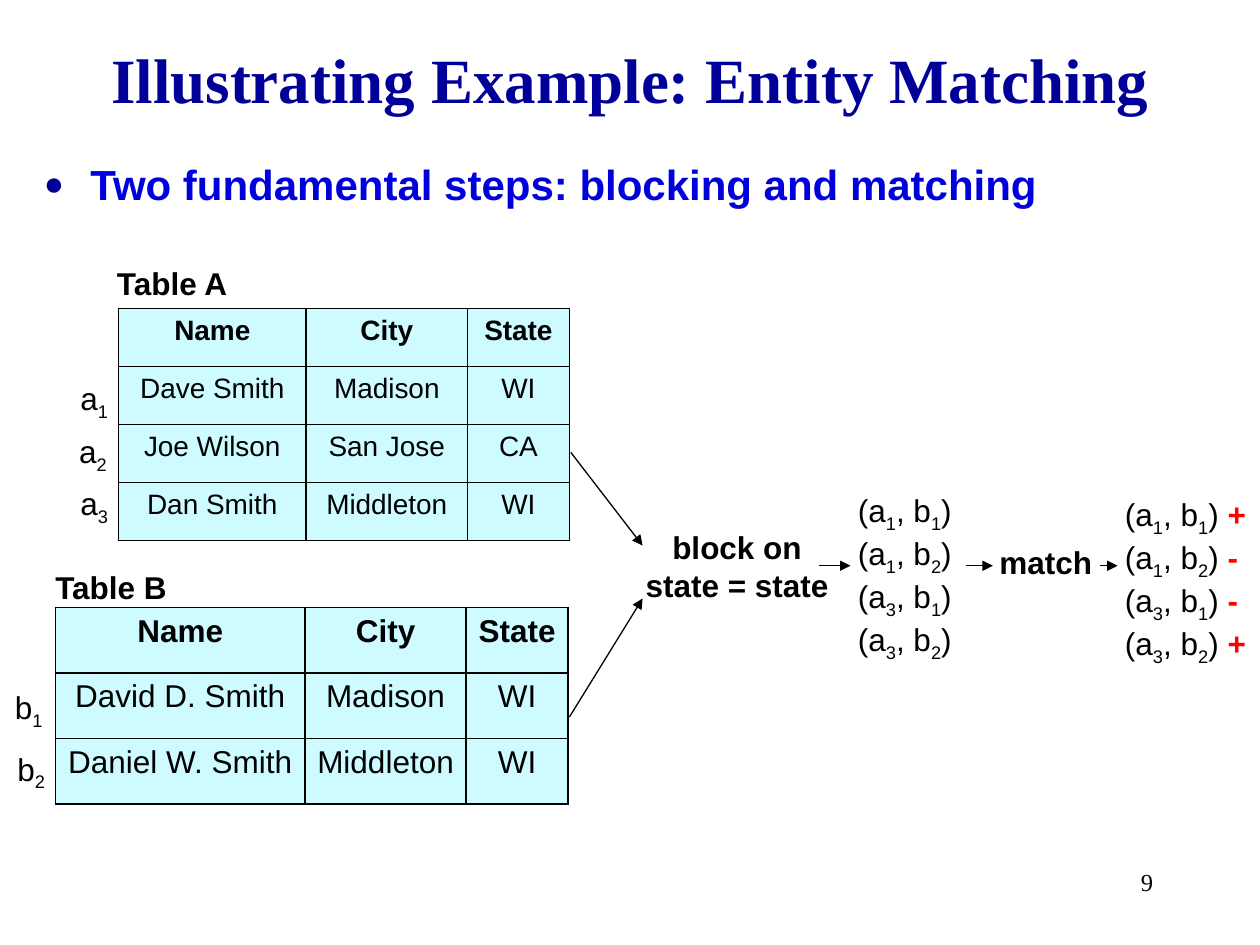
"""Build the entity matching slide: two tables, then blocking and matching."""
import lxml.etree
import pptx
import pptx.dml.color
import pptx.enum.shapes
import pptx.enum.text
import pptx.oxml
import pptx.oxml.ns
import pptx.util

Inches = pptx.util.Inches
Pt = pptx.util.Pt
RGBColor = pptx.dml.color.RGBColor
ALIGN = pptx.enum.text.PP_ALIGN
qn = pptx.oxml.ns.qn

BLACK = RGBColor(0x00, 0x00, 0x00)
NAVY = RGBColor(0x00, 0x00, 0x99)
BLUE = RGBColor(0x00, 0x00, 0xDC)
RED = RGBColor(0xFF, 0x00, 0x00)
PALE_CYAN = RGBColor(0xCD, 0xFB, 0xFF)


def style(paragraph, size, bold=False, color=BLACK, face="Arial", align=ALIGN.LEFT):
    """Set the font and alignment of a paragraph."""
    paragraph.alignment = align
    paragraph.font.name = face
    paragraph.font.size = Pt(size)
    paragraph.font.bold = bold
    paragraph.font.color.rgb = color


def write(left, top, width, height, lines, size=18, **look):
    """Add a text box in which an underscore lowers the next character."""
    box = slide.shapes.add_textbox(Inches(left), Inches(top), Inches(width), Inches(height))
    frame = box.text_frame
    frame.word_wrap = True
    for index, line in enumerate(lines):
        paragraph = frame.paragraphs[0] if index == 0 else frame.add_paragraph()
        style(paragraph, size, **look)
        first, *lowered = line.split("_")
        paragraph.add_run().text = first
        for piece in lowered:
            subscript = paragraph.add_run()
            subscript.text = piece[0]
            subscript.font._element.set("baseline", "-25000")
            if piece[1:]:
                paragraph.add_run().text = piece[1:]
    return frame


deck = pptx.Presentation()
deck.slide_width, deck.slide_height = Inches(10), Inches(7.5)
slide = deck.slides.add_slide(deck.slide_layouts[6])

title = write(0.75, 0.25, 8.5, 0.75, ["Illustrating Example: Entity Matching"],
              size=36, bold=True, color=NAVY, face="Times New Roman", align=ALIGN.CENTER)
title.vertical_anchor = pptx.enum.text.MSO_ANCHOR.MIDDLE
write(7.17, 6.83, 2.08, 0.5, ["9"], size=14, face="Times New Roman", align=ALIGN.RIGHT)

steps = write(0.25, 1.21, 9.5, 0.77, ["Two fundamental steps: blocking and matching"],
              size=24, bold=True, color=BLUE).paragraphs[0]
steps.space_before = Pt(4.8)
steps_format = steps._p.get_or_add_pPr()
steps_format.set("marL", str(Inches(0.37)))
steps_format.set("indent", str(Inches(-0.37)))
bullet = pptx.oxml.parse_xml(
    f'<a:pPr {pptx.oxml.ns.nsdecls("a")}><a:buClr><a:srgbClr val="{NAVY}"/></a:buClr>'
    '<a:buSzPct val="80000"/><a:buFont typeface="Arial"/><a:buChar char="●"/></a:pPr>')
for part in list(bullet):
    steps_format.find(qn("a:defRPr")).addprevious(part)

HEADER = ("Name", "City", "State")
people_a = [HEADER, ("Dave Smith", "Madison", "WI"), ("Joe Wilson", "San Jose", "CA"),
            ("Dan Smith", "Middleton", "WI")]
people_b = [HEADER, ("David D. Smith", "Madison", "WI"), ("Daniel W. Smith", "Middleton", "WI")]

for left, top, name_width, row_height, size, people in [
        (0.94, 2.45, 1.49, 0.46, 16, people_a), (0.44, 4.82, 1.98, 0.52, 18, people_b)]:
    widths = (name_width, 1.28, 0.81)
    table = slide.shapes.add_table(len(people), len(HEADER), Inches(left), Inches(top),
                                   Inches(sum(widths)), Inches(row_height * len(people))).table
    for column, width in zip(table.columns, widths):
        column.width = Inches(width)
    for row_index, person in enumerate(people):
        table.rows[row_index].height = Inches(row_height)
        for column_index, value in enumerate(person):
            cell = table.cell(row_index, column_index)
            cell.text = value
            cell.margin_left = cell.margin_right = Inches(0.05)
            style(cell.text_frame.paragraphs[0], size, bold=row_index == 0, align=ALIGN.CENTER)
            cell_format = cell._tc.get_or_add_tcPr()
            for edge in ("lnL", "lnR", "lnT", "lnB"):
                border = lxml.etree.SubElement(cell_format, qn(f"a:{edge}"), w=str(Pt(1)))
                paint = lxml.etree.SubElement(border, qn("a:solidFill"))
                lxml.etree.SubElement(paint, qn("a:srgbClr"), val=str(BLACK))
            cell.fill.solid()
            cell.fill.fore_color.rgb = PALE_CYAN

for left, top, caption in [(0.83, 2.05, "Table A"), (0.34, 4.46, "Table B")]:
    write(left, top, 1.41, 0.4, [caption], bold=True)

for left, top, row_label in [(0.54, 2.96, "a_1"), (0.53, 3.38, "a_2"), (0.54, 3.79, "a_3"),
                             (0.02, 5.41, "b_1"), (0.04, 5.9, "b_2")]:
    write(left, top, 0.49, 0.4, [row_label])

write(4.95, 4.14, 1.8, 0.71, ["block on", "state = state"], bold=True, align=ALIGN.CENTER)
write(7.78, 4.26, 1.04, 0.4, ["match"], bold=True, align=ALIGN.CENTER)

pairs = [f"(a_{a}, b_{b})" for a in (1, 3) for b in (1, 2)]
write(6.71, 3.85, 1.02, 1.31, pairs)
matches = write(8.83, 3.88, 1.2, 1.31, [pair + " " for pair in pairs])
for paragraph, verdict in zip(matches.paragraphs, "+--+"):
    sign = paragraph.add_run()
    sign.text = verdict
    sign.font.bold = True
    sign.font.color.rgb = RED

for x1, y1, x2, y2 in [(4.53, 3.59, 5.1, 4.33), (4.52, 5.69, 5.1, 4.75), (6.5, 4.49, 6.75, 4.49),
                       (7.67, 4.49, 7.88, 4.49), (8.73, 4.49, 8.87, 4.49)]:
    arrow = slide.shapes.add_connector(pptx.enum.shapes.MSO_CONNECTOR.STRAIGHT,
                                       Inches(x1), Inches(y1), Inches(x2), Inches(y2))
    arrow.line.color.rgb = BLACK
    arrow.line.width = Pt(0.75)
    lxml.etree.SubElement(arrow.line._get_or_add_ln(), qn("a:tailEnd"), type="triangle")
    lxml.etree.SubElement(arrow._element.spPr, qn("a:effectLst"))

deck.save("out.pptx")
